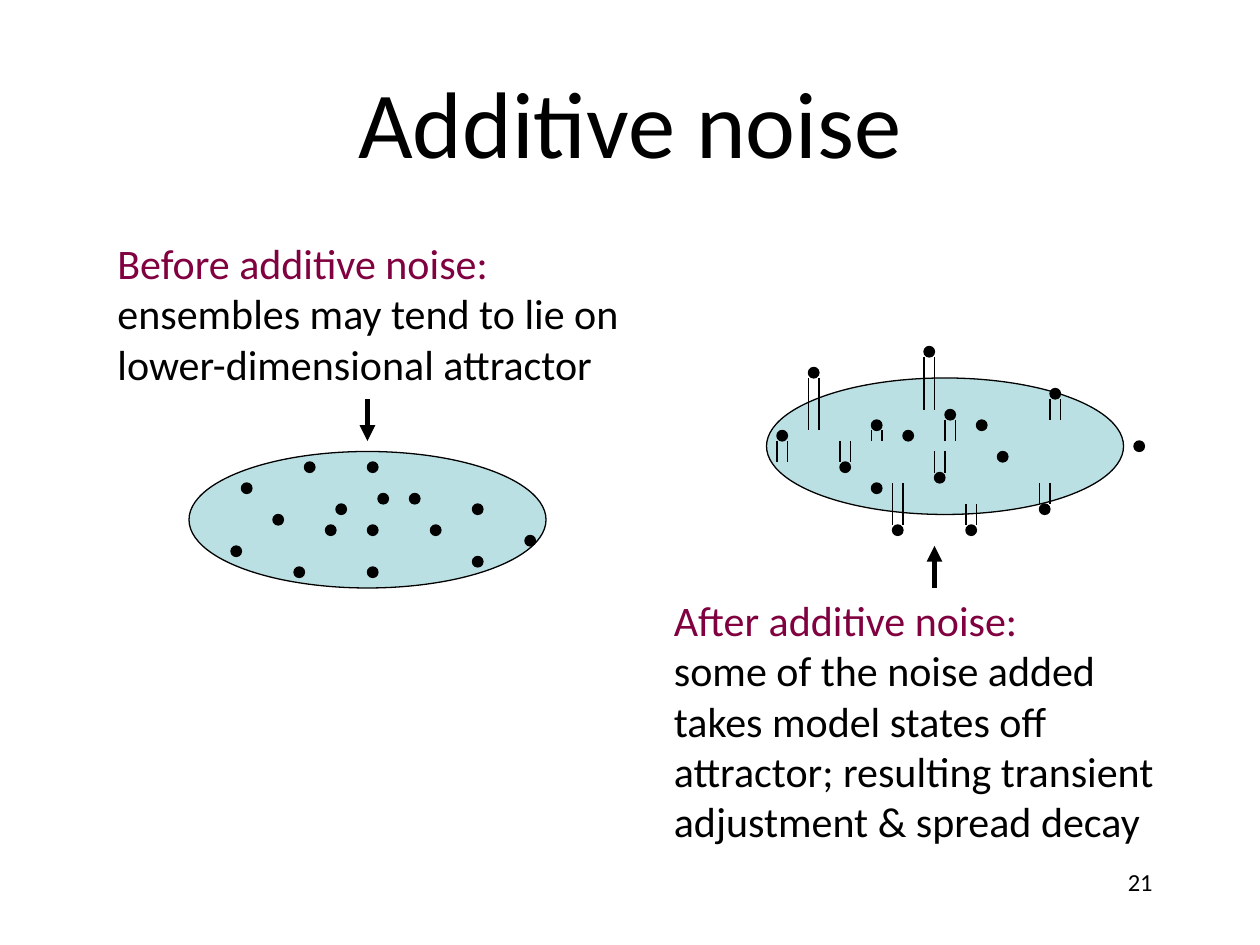
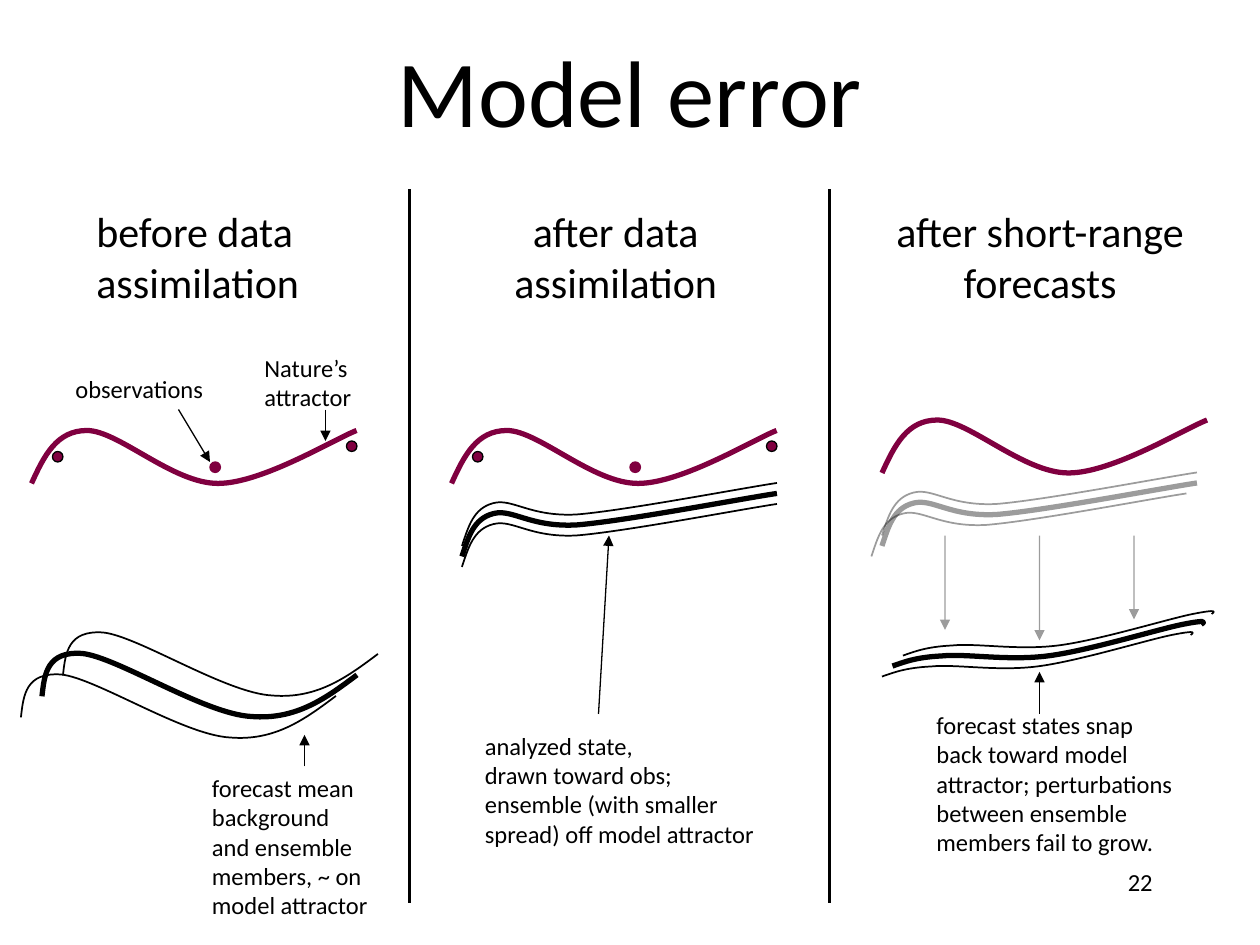
from lxml.etree import SubElement
from pptx import Presentation
from pptx.dml.color import RGBColor
from pptx.enum.shapes import MSO_CONNECTOR, MSO_SHAPE
from pptx.enum.text import MSO_ANCHOR, PP_ALIGN
from pptx.oxml.ns import qn
from pptx.util import Inches, Pt

COLORS = {"ink": "000000", "plum": "800040", "pool": "BBE0E3"}
FONT = "Calibri"
UNIT = 1 / 12  # grid step in inches, also the diameter of a dot
GHOST = 39  # opacity in percent

# Cubic Bézier points in inches: a start, then three points per segment
NATURE = [(0, 0.42), (0.1, 0.2), (0.2, 0), (0.44, 0), (0.69, 0), (1.12, 0.42),
          (1.48, 0.42), (1.83, 0.42), (2.4, 0.07), (2.58, 0)]
MODEL = [(0, 0.36), (0.02, 0.18), (0.04, 0), (0.32, 0.02), (0.6, 0.05), (1.29, 0.5),
         (1.66, 0.52), (2.02, 0.55), (2.26, 0.37), (2.5, 0.19)]
DRAWN = [(0, 0.5), (0.05, 0.35), (0.09, 0.2), (0.25, 0.16), (0.4, 0.12), (0.54, 0.27),
         (0.91, 0.25), (1.29, 0.22), (2.23, 0.04), (2.5, 0)]
SNAPPED = [(0, 0.37), (0.09, 0.34), (0.18, 0.3), (0.39, 0.29), (0.59, 0.27), (0.91, 0.33),
           (1.23, 0.29), (1.55, 0.25), (2.1, 0.08), (2.3, 0.04), (2.5, 0), (2.48, 0.02),
           (2.45, 0.04)]

# Dots in grid steps from the ellipse's corner
BEFORE = [(5, 3), (8, 6), (4, 9), (10, 11), (14, 5), (11, 1), (13, 7), (17, 11),
          (17, 7), (18, 4), (17, 1), (27, 5), (23, 7), (27, 10), (32, 8), (21, 4)]
# A third value is the length of the trail, below the dot if positive
AFTER = [(4, -1, 5), (7, 8, -2), (1, 5, 2), (12, 14, -4), (13, 5, 0), (10, 4, 1),
         (10, 10, 0), (19, 14, -2), (16, 9, -2), (17, 3, 2), (15, -3, 5), (27, 1, 2),
         (22, 7, 0), (26, 12, -2), (35, 6, 0), (20, 4, 0)]


def rgb(name):
    return RGBColor.from_string(COLORS[name])


def snap(*values):
    """Return lengths on a grid of a third of a step."""
    return [Inches(round(value * 36) / 36) for value in values]


def write(frame, lines, size=14, colors=(), align=PP_ALIGN.LEFT):
    """Fill a text frame, one paragraph a line; colors start at the first line."""
    for i, line in enumerate(lines):
        para = frame.paragraphs[0] if i == 0 else frame.add_paragraph()
        para.alignment = align
        run = para.add_run()
        run.text = line
        run.font.size = Pt(size)
        run.font.name = FONT
        run.font.color.rgb = rgb(colors[i] if i < len(colors) else "ink")


def label(slide, x, y, w, h, *lines, wrap=False, **style):
    box = slide.shapes.add_textbox(*snap(x, y), Inches(w), Inches(h))
    box.text_frame.word_wrap = wrap
    write(box.text_frame, lines, **style)


def stroke(shape, color="ink", width=0.75, alpha=None):
    shape.line.color.rgb = rgb(color)
    shape.line.width = Pt(width)
    if alpha:
        paint = shape.line._ln.find(".//" + qn("a:srgbClr"))
        SubElement(paint, qn("a:alpha")).set("val", str(alpha * 1000))


def oval(slide, x, y, w=UNIT, h=UNIT, fill="ink", edge="ink"):
    shape = slide.shapes.add_shape(MSO_SHAPE.OVAL, *snap(x, y, w, h))
    shape.shadow.inherit = False
    shape.fill.solid()
    shape.fill.fore_color.rgb = rgb(fill)
    stroke(shape, edge)


def line(slide, x1, y1, x2, y2, arrow=False, **style):
    link = slide.shapes.add_connector(MSO_CONNECTOR.STRAIGHT, *snap(x1, y1, x2, y2))
    stroke(link, **style)
    if arrow:
        SubElement(link.line._ln, qn("a:tailEnd")).set("type", "triangle")
    SubElement(link._element.spPr, qn("a:effectLst"))


def bend(shape):
    """Turn each three straight segments of a freeform into one cubic Bézier."""
    route = shape._element.spPr.find(".//" + qn("a:path"))
    legs = route.findall(qn("a:lnTo"))
    for i in range(0, len(legs), 3):
        arc = SubElement(route, qn("a:cubicBezTo"))
        for leg in legs[i:i + 3]:
            arc.append(leg[0])
            route.remove(leg)


def curve(slide, x, y, points, **style):
    left, top = snap(x, y)
    knots = [(left + Inches(dx), top + Inches(dy)) for dx, dy in points]
    pen = slide.shapes.build_freeform(*knots[0])
    pen.add_line_segments(knots[1:], close=False)
    shape = pen.convert_to_shape()
    bend(shape)
    shape.shadow.inherit = False
    shape.fill.background()
    stroke(shape, **style)


def ensemble(slide, x, y, points, shifts, alpha=None):
    """Draw a thick mean and a thin member at each shift from it."""
    curve(slide, x, y, points, width=3, alpha=alpha)
    for dx, dy in shifts:
        curve(slide, x + dx, y + dy, points, width=1, alpha=alpha)


def nature(slide, x, y, seen=True):
    """Draw nature's attractor, with the observations if seen."""
    curve(slide, x, y, NATURE, color="plum", width=3)
    if seen:
        for dx, dy, edge in [(0.17, 0.17, "ink"), (1.42, 0.25, "plum"), (2.5, 0.08, "ink")]:
            oval(slide, x + dx, y + dy, fill="plum", edge=edge)


def cloud(slide, x, y, dots):
    oval(slide, x, y, 34 * UNIT, 13 * UNIT, fill="pool")
    for col, row, *trail in dots:
        left, top = x + col * UNIT, y + row * UNIT
        oval(slide, left, top)
        if any(trail):
            size = trail[0] * UNIT
            start = top + UNIT if size > 0 else top
            for side in (left, left + UNIT):
                line(slide, side, start, side, start + size)


def page(deck, title, number, *box):
    slide = deck.slides.add_slide(deck.slide_layouts[5])
    head = slide.shapes.title
    head.left, head.top, head.width, head.height = snap(*box)
    head.text_frame.vertical_anchor = MSO_ANCHOR.MIDDLE
    write(head.text_frame, [title], size=54, align=PP_ALIGN.CENTER)
    label(slide, 7.17, 6.83, 2.08, 0.5, str(number), wrap=True, align=PP_ALIGN.RIGHT)
    return slide


def before_noise(slide, x, y):
    label(slide, x, y, 4.22, 1.31, "Before additive noise:", "ensembles may tend to lie on",
          "lower-dimensional attractor", size=24, colors=["plum"])
    line(slide, x + 2.08, y + 1.33, x + 2.08, y + 1.67, arrow=True, width=3)
    cloud(slide, x + 0.67, y + 1.75, BEFORE)


def after_noise(slide, x, y):
    cloud(slide, x + 0.83, y, AFTER)
    line(slide, x + 2.17, y + 1.67, x + 2.17, y + 1.33, arrow=True, width=3)
    label(slide, x, y + 1.67, 4.05, 2.12, "After additive noise:", "some of the noise added",
          "takes model states off", "attractor; resulting transient",
          "adjustment & spread decay", size=24, colors=["plum"])


def before_data(slide, x, y):
    label(slide, x + 0.67, y + 0.08, 1.83, 0.91, "before data", "assimilation", size=24)
    nature(slide, x + 0.25, y + 1.92)
    label(slide, x + 2, y + 1.25, 0.9, 0.57, "Nature’s", "attractor")
    line(slide, x + 2.58, y + 1.75, x + 2.58, y + 2, arrow=True)
    label(slide, x + 0.5, y + 1.42, 1.23, 0.34, "observations")
    line(slide, x + 1.42, y + 1.75, x + 1.67, y + 2.17, arrow=True)
    ensemble(slide, x + 0.33, y + 3.67, MODEL, [(0.17, -0.17), (-0.17, 0.17)])
    label(slide, x + 1.58, y + 4.58, 1.45, 1.28, "forecast mean", "background",
          "and ensemble", "members, ~ on", "model attractor")
    line(slide, x + 2.42, y + 4.58, x + 2.42, y + 4.33, arrow=True)


def after_data(slide, x, y):
    label(slide, x + 0.64, y + 0.08, 1.83, 0.91, "after data", "assimilation",
          size=24, align=PP_ALIGN.CENTER)
    nature(slide, x + 0.25, y + 1.92)
    ensemble(slide, x + 0.33, y + 2.42, DRAWN, [(0, 0.08), (0, -0.08)])
    label(slide, x + 0.42, y + 4.25, 2.36, 1.04, "analyzed state,", "drawn toward obs;",
          "ensemble (with smaller", "spread) off model attractor")
    line(slide, x + 1.42, y + 4.17, x + 1.5, y + 2.75, arrow=True)


def after_run(slide, x, y):
    label(slide, x + 0.33, y + 0.08, 2.51, 0.91, "after short-range", "forecasts",
          size=24, align=PP_ALIGN.CENTER)
    label(slide, x + 0.67, y + 4.08, 2.09, 1.28, "forecast states snap", "back toward model",
          "attractor; perturbations", "between ensemble", "members fail to grow.")
    line(slide, x + 1.58, y + 4.17, x + 1.58, y + 3.83, arrow=True)
    ensemble(slide, x + 0.42, y + 3.42, SNAPPED, [(0.08, -0.08), (-0.08, 0.08)])
    ensemble(slide, x + 0.33, y + 2.33, DRAWN, [(-0.08, 0.08), (0, -0.08)], alpha=GHOST)
    for dx, end in [(0.83, 3.5), (1.58, 3.58), (2.33, 3.42)]:
        line(slide, x + dx, y + 2.75, x + dx, y + end, arrow=True, alpha=GHOST)
    nature(slide, x + 0.33, y + 1.83, seen=False)


def noise_page(deck):
    slide = page(deck, "Additive noise", 21, 0.67, 0.33, 8.67, 1.25)
    before_noise(slide, 10 * UNIT, 22 * UNIT)
    after_noise(slide, 63 * UNIT, 36 * UNIT)


def error_page(deck):
    slide = page(deck, "Model error", 22, 0.75, 0.25, 8.5, 0.92)
    top, pitch = 1.5, 10 / 3
    for i, panel in enumerate((before_data, after_data, after_run)):
        panel(slide, i * pitch, top)
        if i:
            edge = i * pitch - UNIT
            line(slide, edge, top, edge, top + 5.67, width=2.25)


def main():
    deck = Presentation()
    deck.slide_width, deck.slide_height = Inches(10), Inches(7.5)
    noise_page(deck)
    error_page(deck)
    deck.save("out.pptx")


if __name__ == "__main__":
    main()
